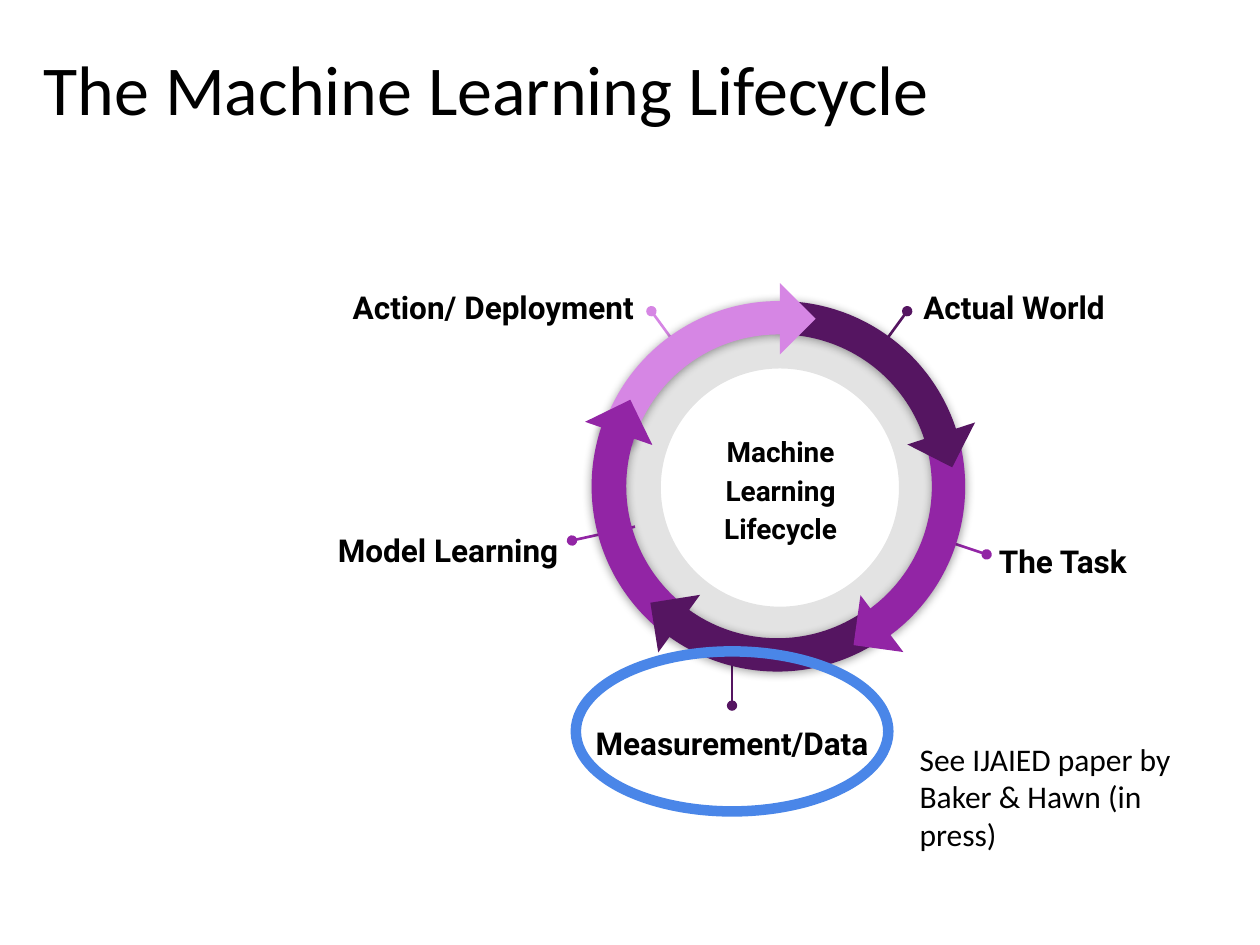
from lxml import etree
from pptx import Presentation
from pptx.dml.color import RGBColor
from pptx.enum.shapes import MSO_CONNECTOR as Link, MSO_SHAPE as Form
from pptx.enum.text import MSO_ANCHOR as Anchor, MSO_AUTO_SIZE as Fit, PP_ALIGN as Align
from pptx.oxml import parse_xml
from pptx.oxml.ns import nsdecls, qn
from pptx.util import Inches, Pt

COLS, ROWS = 100, 75
DARK, MID, LIGHT, BLUE, BLACK = "551561", "9225A5", "D686E4", "4A86E8", "000000"


def tint(code):
    return RGBColor.from_string(code)


class Board:
    """Slide on a grid of COLS by ROWS square cells."""

    head, body = "Roboto", "Calibri"

    def __init__(self, deck):
        self.cell = deck.slide_width / COLS
        self.slide = deck.slides.add_slide(deck.slide_layouts[6])
        self.base = self.slide.shapes

    def span(self, *cells):
        return [round(c * self.cell) for c in cells]

    def text(self, words, box, size, font, bold=False, align=Align.LEFT,
             lead=None, anchor=Anchor.TOP, fit=Fit.NONE, home=None):
        item = (home or self.base).add_textbox(*self.span(*box))
        frame = item.text_frame
        frame.text = words
        frame.word_wrap, frame.auto_size = True, fit
        frame.vertical_anchor = anchor
        pad, = self.span(1)
        frame.margin_left = frame.margin_right = pad
        frame.margin_top = frame.margin_bottom = pad
        for para in frame.paragraphs:
            para.alignment, para.line_spacing = align, lead
            for run in para.runs:
                run.font.name, run.font.size = font, Pt(size)
                run.font.bold = bold
                run.font.color.rgb = tint(BLACK)

    def form(self, kind, box, fill=None, line=None, width=1, turn=0):
        item = self.base.add_shape(kind, *self.span(*box))
        item.shadow.inherit = False
        item.rotation = turn
        if fill:
            item.fill.solid()
            item.fill.fore_color.rgb = tint(fill)
        else:
            item.fill.background()
        if line:
            item.line.color.rgb = tint(line)
            item.line.width = Pt(width)
        else:
            item.line.fill.background()
        return item

    def ring(self, box, share, fill, alpha):
        item = self.form(Form.DONUT, box, fill)
        item.adjustments[0] = share
        hue = item.fill._xPr.find(".//" + qn("a:srgbClr"))
        etree.SubElement(hue, qn("a:alpha"), val=str(alpha * 1000))

    def arc(self, box, fill, turn, start, end, share, flip=False, line=None):
        """Draw a shadowed block arc; start and end are in degrees."""
        item = self.form(Form.BLOCK_ARC, box, fill, line, 0.75, turn)
        # Angles are stored in 60000ths of a degree, adjustments in 100000ths
        for i, value in enumerate((start * 0.6, end * 0.6, share)):
            item.adjustments[i] = value
        props = item._element.spPr
        if flip:
            props.find(qn("a:xfrm")).set("flipH", "1")
        props.find(qn("a:effectLst")).append(parse_xml(
            f'<a:outerShdw {nsdecls("a")} blurRad="{Pt(5.6)}" dist="{Pt(0.8)}"'
            ' dir="5400000" algn="t" rotWithShape="0"><a:srgbClr val="000000">'
            '<a:alpha val="40000"/></a:srgbClr></a:outerShdw>'))

    def pin(self, start, end, hue, home):
        """Draw a line that starts with a dot."""
        item = home.add_connector(Link.STRAIGHT, *self.span(*start, *end))
        item.line.color.rgb = tint(hue)
        item.line.width = Pt(1.5)
        etree.SubElement(item.line._get_or_add_ln(), qn("a:headEnd"), type="oval")
        etree.SubElement(item._element.spPr, qn("a:effectLst"))

    def label(self, words, box, align, hue, start, end):
        home = self.base.add_group_shape().shapes
        self.pin(start, end, hue, home)
        self.text(words, box, 18, self.head, True, align, 1.15, home=home)


def main():
    deck = Presentation()
    deck.slide_width, deck.slide_height = Inches(10), Inches(7.5)
    board = Board(deck)

    board.ring((48, 24.8, 27.8, 27.8), 0.16, BLACK, 11)

    for stage in (
        ("Actual World", (72.3, 21.4, 19, 4.5), Align.LEFT, DARK, (72, 24.7), (69, 28.8)),
        ("Action/ Deployment", (23.5, 21.4, 27.8, 5.3), Align.RIGHT, LIGHT,
         (51.7, 24.7), (54.7, 28.8)),
        ("The Task", (78.3, 41.6, 16.4, 4.5), Align.LEFT, MID, (78.3, 44), (73.5, 42.4)),
        ("Model Learning", (25.6, 40.7, 19.7, 5.3), Align.RIGHT, MID,
         (45.4, 42.9), (50.4, 41.8)),
        ("Measurement/Data", (44.2, 56, 27.8, 7.3), Align.CENTER, DARK,
         (58.1, 56), (58.1, 50.6)),
    ):
        board.label(*stage)

    size = 29.4
    for left, *look in (
        (47.2, DARK, 30, 240.24, 316.64, 0.09),
        (47.2, MID, 210, 336.31, 43.73, 0.09, True),
        (47.1, LIGHT, 330, 238.9, 314.25, 0.09, True),
        (47, MID, 150, 336.41, 50.12, 0.09, False, MID),
        (47, DARK, 210, 262.31, 333.47, 0.09, True),
    ):
        board.arc((left, 23.9, size, size), *look)

    for left, top, hue, turn in (
        (72.7, 32.4, DARK, 297),
        (47.1, 32.4, MID, 154),
        (68, 47.5, MID, 7.9),
        (51.9, 47.5, DARK, 81),
        (59.9, 23.3, LIGHT, 225),
    ):
        board.form(Form.RIGHT_TRIANGLE, (left, top, 4, 4), hue, turn=turn)

    board.text("Machine Learning Lifecycle", (52.7, 34.3, 18.5, 8.8), 16,
               board.head, True, Align.CENTER, 1.15, Anchor.MIDDLE)
    board.form(Form.OVAL, (45.7, 51.7, 24.8, 12.7), line=BLUE, width=6)
    board.text("See IJAIED paper by\vBaker & Hawn (in press)",
               (72, 57.7, 24.8, 11.1), 18, board.body, fit=Fit.SHAPE_TO_FIT_TEXT)
    board.text("The Machine Learning Lifecycle", (2.5, 2.6, 93.2, 6.3), 40, board.body)

    deck.save("out.pptx")


if __name__ == "__main__":
    main()
